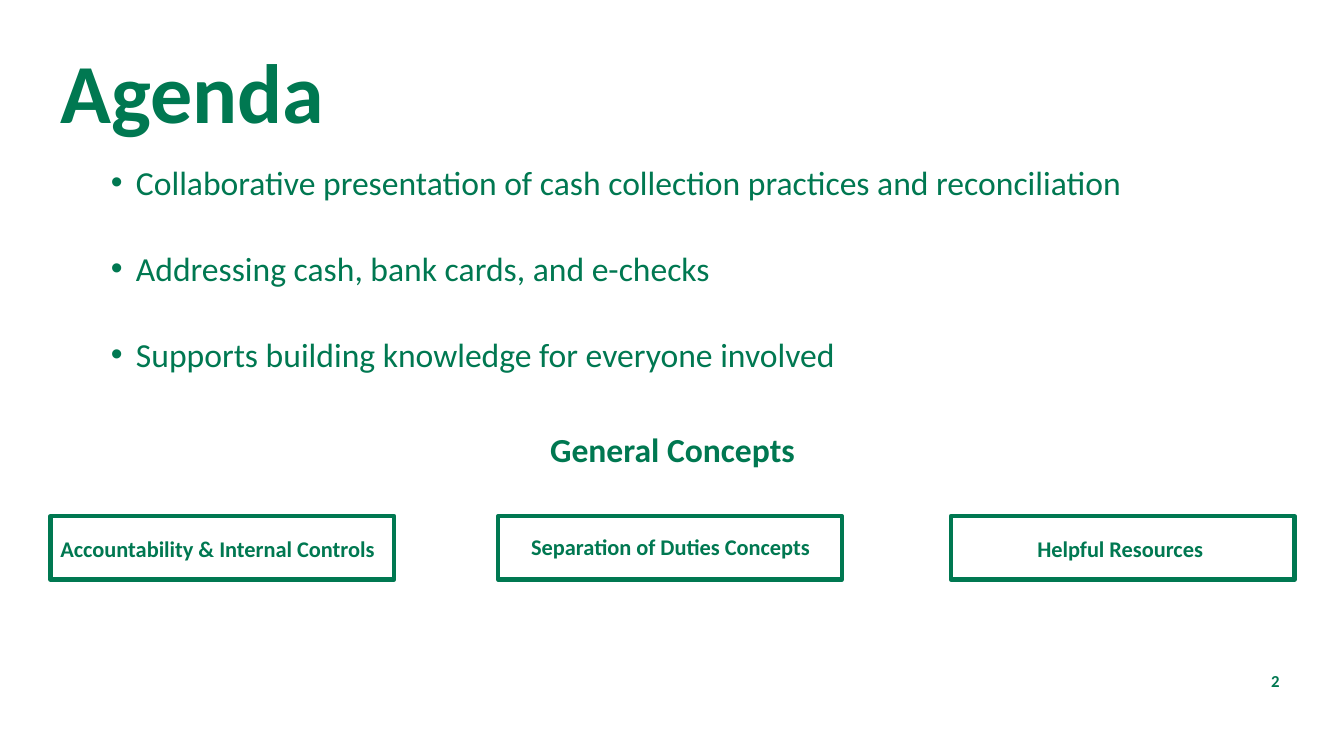
import pptx
import pptx.dml.color
import pptx.enum.shapes
import pptx.enum.text
import pptx.util
from lxml import etree
from pptx.oxml.ns import qn
from pptx.util import Inches

COLORS = {"green": "007851", "white": "FFFFFF"}
FONT = "Calibri"
ALIGN = pptx.enum.text.PP_ALIGN
ANCHOR = pptx.enum.text.MSO_ANCHOR

TOPICS = [
    "Collaborative presentation of cash collection practices and reconciliation",
    "Addressing cash, bank cards, and e-checks",
    "Supports building knowledge for everyone involved",
]

# Text, left of the frame, then label offset in the frame and label width
CONCEPTS = [
    ("Accountability & Internal Controls", 0.5, 0, 0.14, 3.41),
    ("Separation of Duties Concepts", 4.94, 0.23, 0.12, 2.99),
    ("Helpful Resources", 9.43, 0.76, 0.14, 1.87),
]


def green():
    return pptx.dml.color.RGBColor.from_string(COLORS["green"])


def add_text_frame(slide, left, top, width, height, anchor=ANCHOR.TOP):
    box = slide.shapes.add_textbox(
        Inches(left), Inches(top), Inches(width), Inches(height))
    box.text_frame.word_wrap = True
    box.text_frame.vertical_anchor = anchor
    return box.text_frame


def write_run(paragraph, text, size, bold=True):
    run = paragraph.add_run()
    run.text = text
    run.font.name = FONT
    run.font.size = pptx.util.Pt(size)
    run.font.bold = bold
    run.font.color.rgb = green()


def add_line(slide, box, text, size, align=ALIGN.LEFT, spacing=1.0,
             anchor=ANCHOR.TOP):
    """Place a single bold line of text in the given box."""
    paragraph = add_text_frame(slide, *box, anchor=anchor).paragraphs[0]
    paragraph.alignment = align
    paragraph.line_spacing = spacing
    write_run(paragraph, text, size)


def add_bullet(paragraph, indent, hanging):
    properties = paragraph._p.get_or_add_pPr()
    properties.set("marL", str(Inches(indent)))
    properties.set("indent", str(-Inches(hanging)))
    bullet_font = etree.SubElement(properties, qn("a:buFont"))
    bullet_font.set("typeface", "Arial")
    bullet = etree.SubElement(properties, qn("a:buChar"))
    bullet.set("char", "•")


def add_topics(slide, left, top, width, height):
    frame = add_text_frame(slide, left, top, width, height)
    for index, topic in enumerate(TOPICS):
        paragraph = frame.add_paragraph() if index else frame.paragraphs[0]
        add_bullet(paragraph, 0.75, 0.25)
        paragraph.line_spacing = 0.9
        if index:
            paragraph.space_before = pptx.util.Pt(35.5)
        write_run(paragraph, topic, 24, bold=False)


def add_concept(slide, left, top, width, height, text, label):
    """Draw a framed concept; label is its text's offset and width."""
    frame = slide.shapes.add_shape(
        pptx.enum.shapes.MSO_SHAPE.RECTANGLE,
        Inches(left), Inches(top), Inches(width), Inches(height))
    frame.shadow.inherit = False
    frame.fill.background()
    frame.line.color.rgb = green()
    frame.line.width = pptx.util.Pt(3)
    across, down, label_width = label
    add_line(slide, (left + across, top + down, label_width, 0.37), text, 16)


def add_agenda_slide(presentation):
    slide = presentation.slides.add_slide(presentation.slide_layouts[6])
    background = slide.background.fill
    background.solid()
    background.fore_color.rgb = pptx.dml.color.RGBColor.from_string(
        COLORS["white"])
    add_line(slide, (0.5, 0.46, 12.29, 0.85), "Agenda", 60, spacing=0.9)
    add_topics(slide, 0.5, 1.6, 12.29, 2.36)
    add_line(slide, (4.88, 4.25, 3.58, 0.55), "General Concepts", 24,
             align=ALIGN.CENTER, spacing=0.9)
    for text, left, *label in CONCEPTS:
        add_concept(slide, left, 5.12, 3.41, 0.63, text, label)
    add_line(slide, (11.86, 6.61, 0.93, 0.29), "2", 12, align=ALIGN.RIGHT,
             anchor=ANCHOR.MIDDLE)


def main():
    presentation = pptx.Presentation()
    presentation.slide_width = Inches(13.33)
    presentation.slide_height = Inches(7.5)
    add_agenda_slide(presentation)
    presentation.save("out.pptx")


if __name__ == "__main__":
    main()
